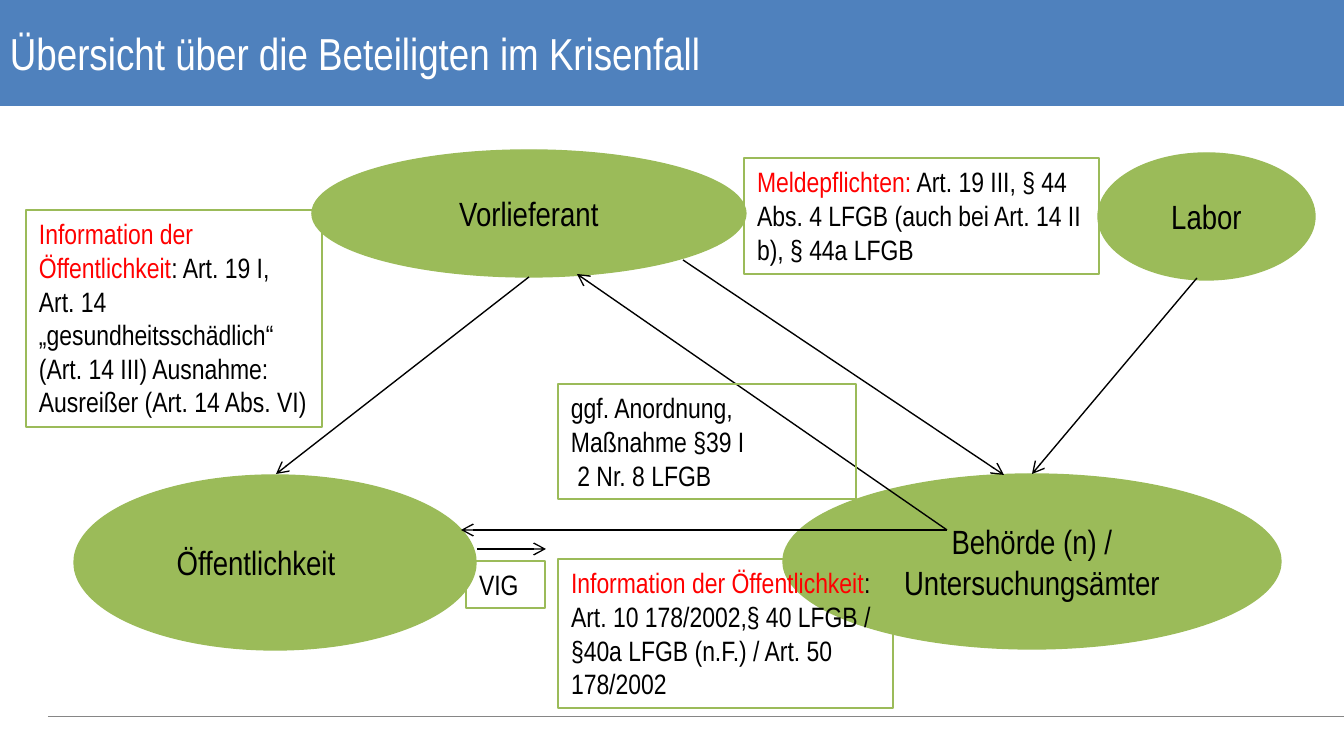
from lxml import etree
from pptx import Presentation
from pptx.dml.color import RGBColor
from pptx.enum.shapes import MSO_CONNECTOR, MSO_SHAPE
from pptx.enum.text import MSO_ANCHOR, MSO_AUTO_SIZE, PP_ALIGN
from pptx.oxml.ns import qn
from pptx.util import Emu, Pt

RECTANGLE, OVAL = MSO_SHAPE.RECTANGLE, MSO_SHAPE.OVAL
STRAIGHT = MSO_CONNECTOR.STRAIGHT
TOP, MIDDLE, BOTTOM = MSO_ANCHOR.TOP, MSO_ANCHOR.MIDDLE, MSO_ANCHOR.BOTTOM
LEFT, CENTER = PP_ALIGN.LEFT, PP_ALIGN.CENTER
FIT_SHAPE = MSO_AUTO_SIZE.SHAPE_TO_FIT_TEXT

FONT = "Arial Narrow"
BLUE, GREEN, GREY = "4F81BD", "9BBB59", "868686"
RED, BLACK, WHITE = "FF0000", "000000", "FFFFFF"
WIDTH, HEIGHT = 1344, 756
INSETS = (13, 7, 13, 7)

PARTIES = [
    ("Vorlieferant", (312, 150, 434, 127), INSETS),
    ("Öffentlichkeit", (74, 475, 402, 175), (13, 7, 51, 7)),
    ("Behörde (n) / Untersuchungsämter", (783, 474, 498, 175), INSETS),
    ("Labor", (1098, 153, 217, 127), INSETS),
]
ARROWS = [
    ((529, 277), (276, 474)),    # Vorlieferant – Öffentlichkeit
    ((947, 530), (577, 274)),    # Behörde – Vorlieferant
    ((947, 530), (461, 530)),    # Behörde – Öffentlichkeit
    ((683, 260), (1004, 475)),   # Vorlieferant – Behörde
    ((1197, 278), (1032, 474)),  # Labor – Behörde
    ((477, 549), (546, 549)),    # Öffentlichkeit – VIG
]
NOTES = [
    ((744, 158, 355, 116), "Meldepflichten:",
     " Art. 19 III, § 44 Abs. 4 LFGB (auch bei Art. 14 II b), § 44a LFGB"),
    ((26, 210, 296, 217), "Information der Öffentlichkeit",
     ": Art. 19 I, Art. 14 „gesundheitsschädlich“ (Art. 14 III) "
     "Ausnahme: Ausreißer (Art. 14 Abs. VI)"),
    ((558, 559, 335, 149), "Information der Öffentlichkeit",
     ": Art. 10 178/2002,§ 40 LFGB / §40a LFGB (n.F.) / Art. 50 178/2002"),
    ((558, 384, 298, 115), "", "ggf. Anordnung, Maßnahme §39 I\v 2 Nr. 8 LFGB"),
    ((466, 561, 79, 47), "", "VIG"),
]


def px(length):
    return Emu(round(length * 914400 / 134.4))


def rgb(value):
    return RGBColor.from_string(value)


def add_box(page, kind, bounds, fill=None, line=None):
    box = page.shapes.add_shape(kind, *map(px, bounds))
    box.shadow.inherit = False
    if fill:
        box.fill.solid()
        box.fill.fore_color.rgb = rgb(fill)
    else:
        box.fill.background()
    if line:
        box.line.color.rgb = rgb(line)
        box.line.width = Pt(0.75)
    else:
        box.line.fill.background()
    return box


def write(box, spans, size, anchor, align, insets=INSETS):
    """Fill the box with one paragraph of (text, colour) spans."""
    frame = box.text_frame
    frame.word_wrap = True
    frame.vertical_anchor = anchor
    (frame.margin_left, frame.margin_top,
     frame.margin_right, frame.margin_bottom) = map(px, insets)
    para = frame.paragraphs[0]
    para.alignment = align
    for text, colour in spans:
        for number, piece in enumerate(text.split("\v")):
            if number:
                para.add_line_break()
            span = para.add_run()
            span.text = piece
            span.font.name = FONT
            span.font.size = Pt(size)
            span.font.color.rgb = rgb(colour)
    return para


def add_line(page, start, end, colour=BLACK, width=0.75, arrow=True):
    line = page.shapes.add_connector(STRAIGHT, *map(px, start + end))
    line.line.color.rgb = rgb(colour)
    line.line.width = Pt(width)
    if arrow:
        outline = line.line._get_or_add_ln()
        etree.SubElement(outline, qn("a:tailEnd"), type="arrow")
    etree.SubElement(line._element.spPr, qn("a:effectLst"))


def add_title(page, bounds, text):
    box = add_box(page, RECTANGLE, bounds, fill=BLUE)
    para = write(box, [(text, WHITE)], 24, BOTTOM, LEFT, (10, 0, 0, 26))
    para.line_spacing = 0.9


def add_party(page, bounds, name, insets):
    box = add_box(page, OVAL, bounds, GREEN, GREEN)
    write(box, [(name, BLACK)], 18, MIDDLE, CENTER, insets)


def add_note(page, bounds, heading, text):
    box = add_box(page, RECTANGLE, bounds, line=GREEN)
    spans = [(heading, RED)] if heading else []
    write(box, spans + [(text, BLACK)], 15, TOP, LEFT)
    box.text_frame.auto_size = FIT_SHAPE


def main():
    deck = Presentation()
    deck.slide_width, deck.slide_height = px(WIDTH), px(HEIGHT)
    page = deck.slides.add_slide(deck.slide_layouts[6])
    add_line(page, (48, 717), (WIDTH, 717), GREY, 0.5, arrow=False)
    add_title(page, (0, 0, WIDTH, 106),
              "Übersicht über die Beteiligten im Krisenfall")
    for name, bounds, insets in PARTIES:
        add_party(page, bounds, name, insets)
    for start, end in ARROWS:
        add_line(page, start, end)
    for bounds, heading, text in NOTES:
        add_note(page, bounds, heading, text)
    deck.save("out.pptx")


if __name__ == "__main__":
    main()
